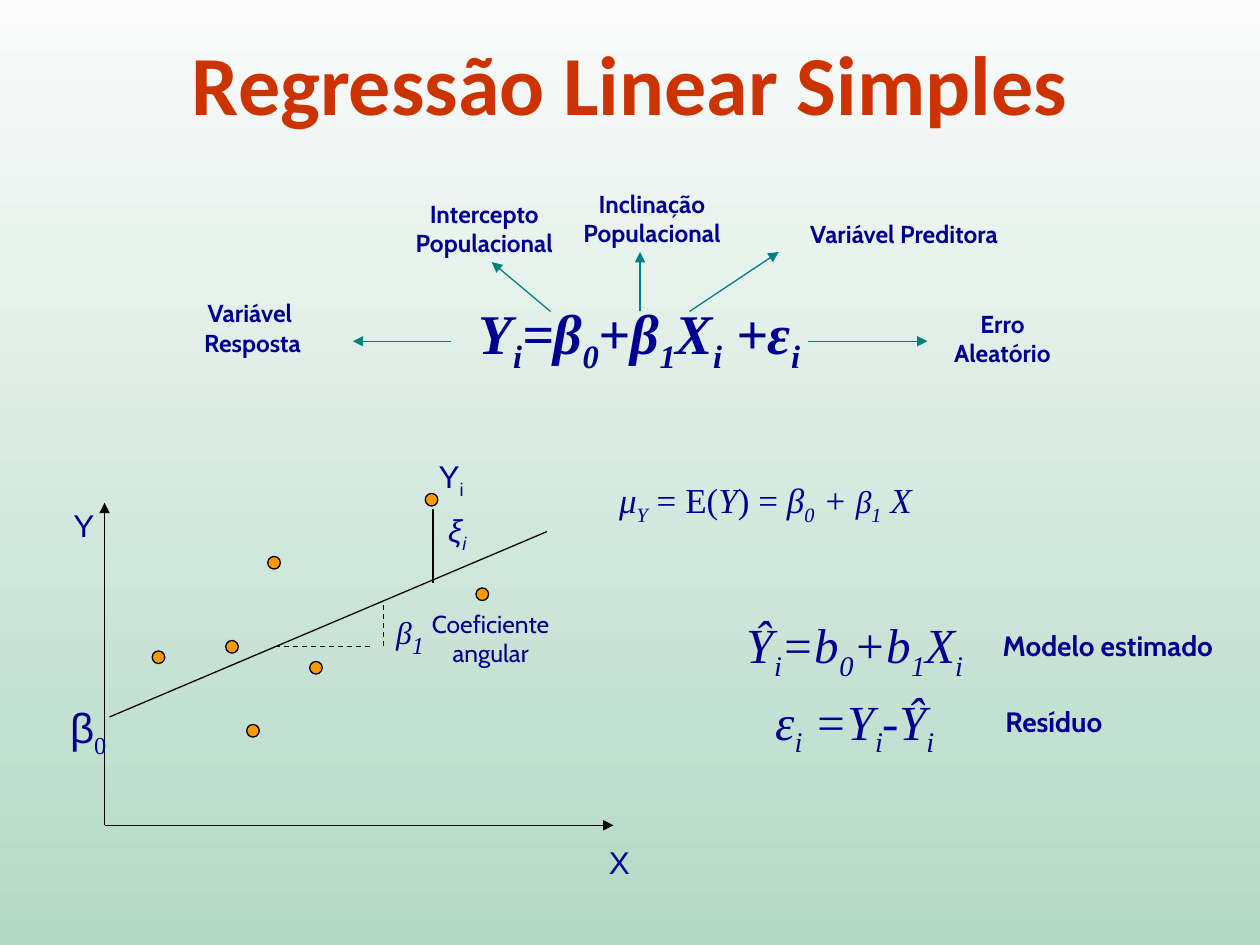
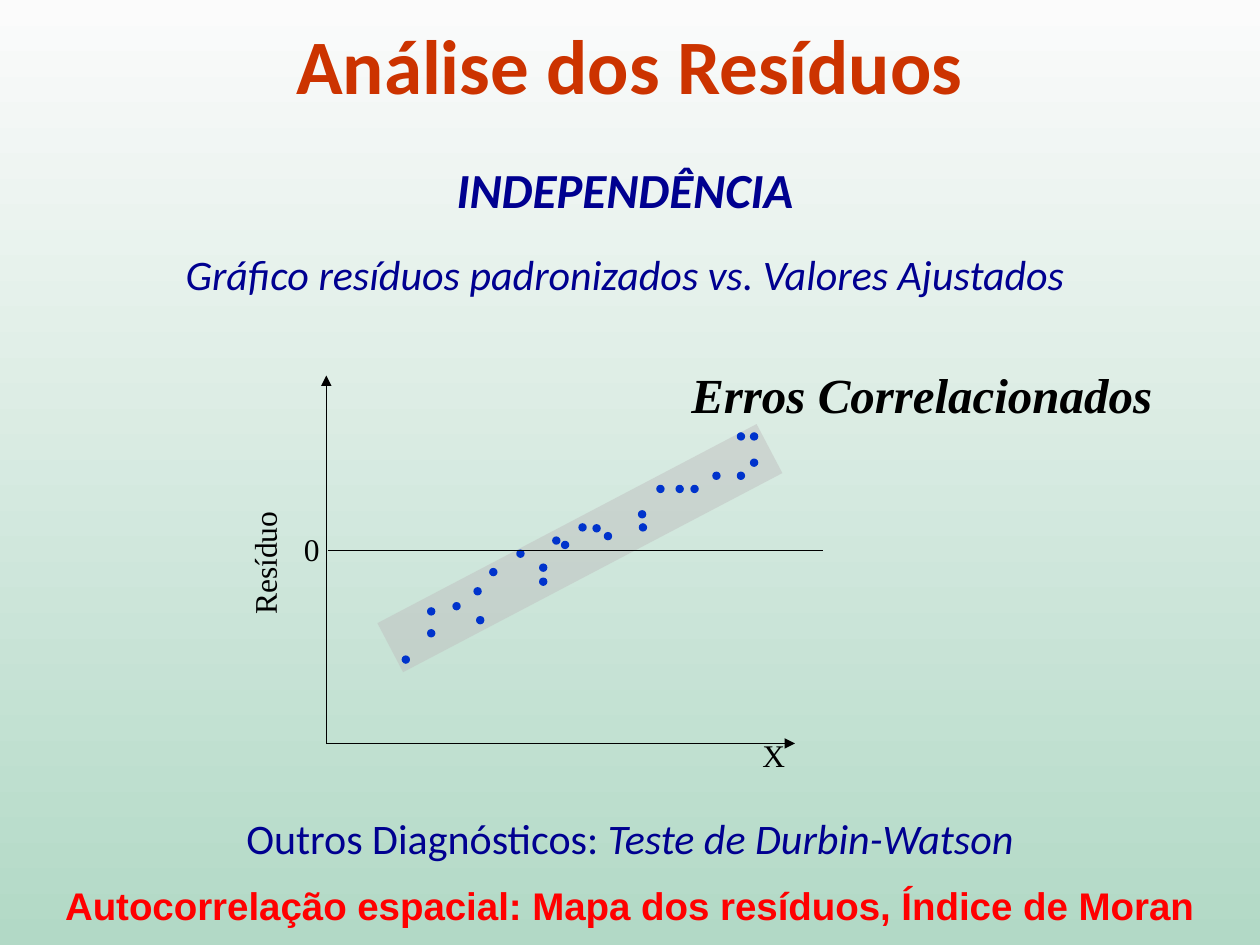
from dataclasses import dataclass
from typing import NamedTuple, Optional

from lxml.etree import SubElement
from pptx import Presentation
from pptx.dml.color import RGBColor
from pptx.enum.dml import MSO_LINE
from pptx.enum.shapes import MSO_CONNECTOR, MSO_SHAPE
from pptx.enum.text import MSO_ANCHOR, MSO_AUTO_SIZE, PP_ALIGN
from pptx.oxml.ns import qn
from pptx.util import Pt

NAVY = RGBColor(0x00, 0x00, 0x90)
TITLE_RED = RGBColor(0xCC, 0x33, 0x00)
ALERT_RED = RGBColor(0xFF, 0x00, 0x00)
BLACK = RGBColor(0x00, 0x00, 0x00)
TEAL = RGBColor(0x00, 0x80, 0x80)
ORANGE = RGBColor(0xFF, 0x99, 0x00)
BLUE = RGBColor(0x00, 0x33, 0xCC)
GREY = RGBColor(0xC0, 0xC0, 0xC0)
PALE_GREEN = RGBColor(0xB2, 0xD9, 0xC6)
NEAR_WHITE = RGBColor(0xFB, 0xFB, 0xFB)

SERIF = "Times New Roman"
SANS = "Arial"
LABEL = "Cabin"
HEADING = "Calibri"


class Box(NamedTuple):
    left: float
    top: float
    width: float
    height: float


@dataclass
class Span:
    text: str
    size: Optional[float] = None
    font: Optional[str] = None
    color: Optional[RGBColor] = None
    bold: Optional[bool] = None
    italic: Optional[bool] = None


@dataclass
class Label:
    box: Box
    lines: list
    size: float = 18
    font: str = SANS
    bold: bool = False
    italic: bool = False
    color: RGBColor = NAVY
    wrap: bool = False
    align: PP_ALIGN = PP_ALIGN.CENTER
    gap: float = 0
    rotation: float = 0


@dataclass
class Stroke:
    start: tuple
    end: tuple
    color: RGBColor = BLACK
    arrow: bool = False
    dashed: bool = False


def pick(value, default):
    return default if value is None else value


def add_run(paragraph, text, size, font, color, bold, italic, subscript):
    run = paragraph.add_run()
    run.text = text
    run.font.size = Pt(size)
    run.font.name = font
    run.font.bold = bold
    run.font.italic = italic
    run.font.color.rgb = color
    if subscript:
        run.font._element.set("baseline", "-25000")


def write_text(frame, lines, size=18, font=SANS, color=NAVY, bold=False, italic=False,
               align=PP_ALIGN.CENTER, gap=0, spacing=None, wrap=True):
    """An underscore lowers the one character that follows it."""
    frame.word_wrap = wrap
    frame.vertical_anchor = MSO_ANCHOR.TOP
    for index, line in enumerate(lines):
        paragraph = frame.add_paragraph() if index else frame.paragraphs[0]
        paragraph.alignment = align
        paragraph.space_before = Pt(gap if index else 0)
        if spacing:
            paragraph.line_spacing = spacing
        for span in [Span(line)] if isinstance(line, str) else line:
            look = (pick(span.size, size), pick(span.font, font), pick(span.color, color),
                    pick(span.bold, bold), pick(span.italic, italic))
            plain, *lowered = span.text.split("_")
            if plain:
                add_run(paragraph, plain, *look, False)
            for part in lowered:
                add_run(paragraph, part[0], *look, True)
                if part[1:]:
                    add_run(paragraph, part[1:], *look, False)


def place(shape, box: Box) -> None:
    shape.left, shape.top, shape.width, shape.height = map(Pt, box)


def add_label(slide, label: Label) -> None:
    text_box = slide.shapes.add_textbox(*map(Pt, label.box))
    text_box.rotation = label.rotation
    write_text(text_box.text_frame, label.lines, size=label.size, font=label.font,
               color=label.color, bold=label.bold, italic=label.italic,
               align=label.align, gap=label.gap, wrap=label.wrap)


def add_stroke(slide, stroke: Stroke) -> None:
    line = slide.shapes.add_connector(
        MSO_CONNECTOR.STRAIGHT, *map(Pt, stroke.start + stroke.end))
    line.line.color.rgb = stroke.color
    line.line.width = Pt(0.75)
    if stroke.dashed:
        line.line.dash_style = MSO_LINE.DASH
    if stroke.arrow:
        SubElement(line.line._get_or_add_ln(), qn("a:tailEnd"), type="triangle")
    SubElement(line._element.spPr, qn("a:effectLst"))


def add_filled(slide, kind, box: Box, fill: RGBColor, outline=None):
    shape = slide.shapes.add_shape(kind, *map(Pt, box))
    shape.shadow.inherit = False
    shape.fill.solid()
    shape.fill.fore_color.rgb = fill
    if outline is None:
        shape.line.fill.background()
    else:
        shape.line.color.rgb = outline
        shape.line.width = Pt(0.75)
    return shape


def add_points(slide, corners, diameter: float, fill: RGBColor, outline=None) -> None:
    for left, top in corners:
        add_filled(slide, MSO_SHAPE.FLOWCHART_CONNECTOR,
                   Box(left, top, diameter, diameter), fill, outline)


def add_titled_slide(deck, layout: int, title: str, box: Box, size: float):
    slide = deck.slides.add_slide(deck.slide_layouts[layout])
    place(slide.shapes.title, box)
    frame = slide.shapes.title.text_frame
    frame.auto_size = MSO_AUTO_SIZE.NONE
    write_text(frame, [title], size=size, font=HEADING, color=TITLE_RED, bold=True)
    return slide


def paint_background(deck) -> None:
    fill = deck.slide_master.background.fill
    fill.gradient()
    fill.gradient_angle = 90
    for stop, color, position in zip(fill.gradient_stops, (PALE_GREEN, NEAR_WHITE), (0, 1)):
        stop.color.rgb = color
        stop.position = position


def build_regression(deck) -> None:
    slide = add_titled_slide(deck, 5, "Regressão Linear Simples", Box(0, 14.4, 720, 65.5), 48)

    observations = [(129, 366), (87, 372), (141, 414), (153, 318),
                    (177, 378), (243, 282), (272, 336)]
    add_points(slide, observations, 7.2, ORANGE, BLACK)

    origin = (59.8, 471.6)
    strokes = [
        Stroke((247.5, 291), (247.5, 333)),
        Stroke((219, 369.3), (219, 345.6), dashed=True),
        Stroke((157, 369.3), (213, 369.3), dashed=True),
        Stroke((62.6, 409.7), (312.5, 303.8)),
        Stroke(origin, (350.6, 471.6), arrow=True),
        Stroke(origin, (59.8, 287.3), arrow=True),
    ]
    term_arrows = [
        ((462, 195), (530, 195)),
        ((394, 178), (445, 144)),
        ((365.8, 178), (365.8, 144)),
        ((314.6, 178), (281, 149.8)),
        ((257.8, 195), (201.6, 195)),
    ]
    strokes += [Stroke(start, end, TEAL, arrow=True) for start, end in term_arrows]
    for stroke in strokes:
        add_stroke(slide, stroke)

    mean_formula = [Span("μ_Y"), Span(" = E(", italic=False), Span("Y"),
                    Span(") = ", italic=False), Span("β_0 + "), Span("β", size=18),
                    Span("_1 X")]
    labels = [
        Label(Box(243.4, 257.8, 28.8, 29), ["Y_i"]),
        Label(Box(246.2, 288.7, 30.2, 29), ["ξ_i"], italic=True),
        Label(Box(340.6, 478, 26.6, 29), ["X"]),
        Label(Box(34.6, 285.8, 26.6, 29), ["Y"]),
        Label(Box(29.5, 397.4, 41.8, 36.7), [[Span("β", font=SANS), Span("_0")]],
              size=24, font=SERIF),
        Label(Box(216.7, 340.6, 35.3, 36.7), [[Span("β", size=18), Span("_1")]],
              size=24, font=SERIF, italic=True),
        Label(Box(239, 344.2, 82.8, 41), ["Coeficiente", "angular"], 14, LABEL),
        Label(Box(302.4, 270, 270, 31), [mean_formula], 20, SERIF, italic=True, wrap=True),
        Label(Box(252, 167, 226.8, 45.4), ["Y_i=β_0+β_1X_i +ε_i"], 32, SERIF,
              bold=True, italic=True, wrap=True),
        Label(Box(414.7, 347.8, 147.6, 81.4), ["Ŷ_i=b_0+b_1X_i", "ε_i =Y_i-Ŷ_i"], 28, SERIF,
              italic=True, wrap=True, gap=5.6),
    ]
    term_names = [
        (Box(319.7, 104.4, 105.8, 41), ["Inclinação", "Populacional"], False),
        (Box(223.9, 110.2, 105.8, 41), ["Intercepto", "Populacional"], False),
        (Box(530, 172.8, 85.7, 41), ["Erro Aleatório"], True),
        (Box(445, 121.7, 143.3, 24.5), ["Variável Preditora"], False),
        (Box(104.4, 167, 79.9, 41), ["Variável ", "Resposta"], False),
    ]
    labels += [Label(box, lines, 14, LABEL, bold=True, wrap=wrap)
               for box, lines, wrap in term_names]
    model_names = [(Box(565.9, 355.7, 164, 26.6), "Modelo estimado"),
                   (Box(567.4, 398.9, 152.6, 26.6), "Resíduo")]
    labels += [Label(box, [name], 16, LABEL, bold=True, wrap=True, align=PP_ALIGN.LEFT)
               for box, name in model_names]
    for label in labels:
        add_label(slide, label)


def build_residuals(deck) -> None:
    slide = add_titled_slide(deck, 1, "Análise dos Resíduos", Box(0, 6.5, 720, 60.5), 44)

    topic = slide.placeholders[1]
    place(topic, Box(21.6, 80.6, 671, 96.5))
    topic.text_frame.auto_size = MSO_AUTO_SIZE.NONE
    write_text(topic.text_frame,
               [[Span("INDEPENDÊNCIA", size=28, bold=True)],
                "Gráfico resíduos padronizados vs. Valores Ajustados"],
               size=24, font=HEADING, italic=True, gap=12, spacing=1.2)
    for paragraph in topic.text_frame.paragraphs:
        properties = paragraph._p.get_or_add_pPr()
        properties.set("marL", "0")
        properties.set("indent", "0")
        SubElement(properties, qn("a:buNone"))

    trend_band = add_filled(slide, MSO_SHAPE.RECTANGLE, Box(209, 297.4, 244.8, 31.7), GREY)
    trend_band.rotation = -27.7
    band_color = trend_band._element.spPr.find(qn("a:solidFill"))[0]
    SubElement(band_color, qn("a:alpha"), val="50000")

    residuals = [
        (229.5, 374.5), (244, 359.5), (244, 347), (258.5, 344), (270.5, 335.5),
        (272, 352), (279.5, 324.5), (295, 314), (308, 322), (308, 330),
        (315.5, 306.5), (320.5, 309), (330.5, 299), (338.5, 299.5), (345, 304),
        (364.5, 291.5), (365, 299), (375, 277), (386, 277), (394.5, 277),
        (407, 269.5), (421, 269.5), (421, 247), (428.5, 262), (428.5, 247),
    ]
    add_points(slide, residuals, 4.8, BLUE)

    origin = (186.5, 424.8)
    for stroke in [
        Stroke((187.2, 314.6), (470.2, 314.6)),
        Stroke(origin, (186.5, 214.6), arrow=True),
        Stroke(origin, (454.3, 424.8), arrow=True),
    ]:
        add_stroke(slide, stroke)

    diagnostics = [
        [Span("Outros Diagnósticos: "), Span("Teste de Durbin-Watson", italic=True)],
        [Span("Autocorrelação espacial: Mapa dos resíduos, Índice de Moran",
              size=22, font=SANS, color=ALERT_RED, bold=True)],
    ]
    for label in [
        Label(Box(28, 460.8, 664, 90.7), diagnostics, 24, HEADING, wrap=True, gap=11),
        Label(Box(428.4, 416.9, 27.4, 29), ["X"], font=SERIF, color=BLACK),
        Label(Box(166.3, 299.5, 23.8, 29), ["0"], font=SERIF, color=BLACK),
        Label(Box(381.6, 204.5, 290.2, 41), ["Erros Correlacionados"], 28, SERIF,
              bold=True, italic=True, color=BLACK),
        Label(Box(105, 307.4, 92.2, 29), ["Resíduo"], font=SERIF, color=BLACK,
              wrap=True, rotation=270),
    ]:
        add_label(slide, label)


def main() -> None:
    deck = Presentation()
    deck.slide_width, deck.slide_height = Pt(720), Pt(540)
    paint_background(deck)
    build_regression(deck)
    build_residuals(deck)
    deck.save("out.pptx")


if __name__ == "__main__":
    main()
